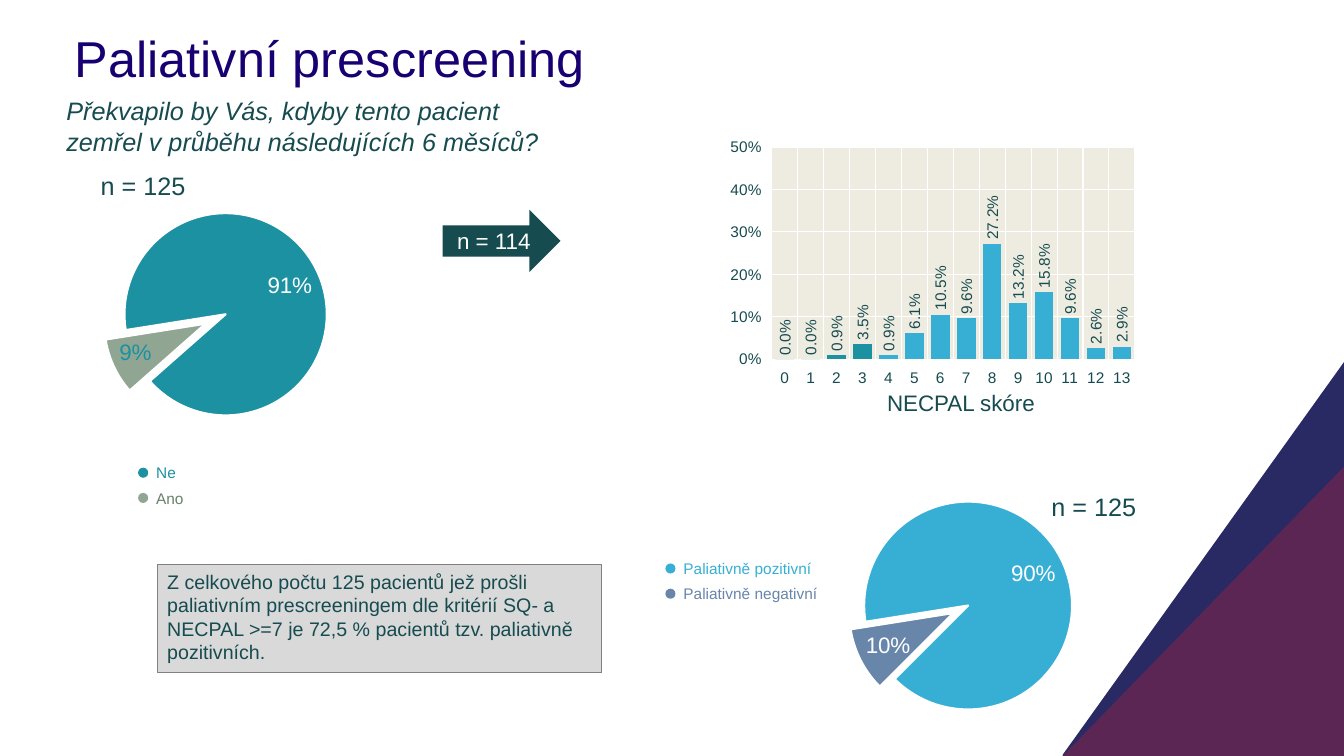
"""Builds the palliative prescreening slide with its charts and notes."""
from dataclasses import dataclass

from lxml import etree
from pptx import Presentation
from pptx.chart.data import CategoryChartData
from pptx.dml.color import RGBColor
from pptx.enum.chart import XL_CHART_TYPE, XL_LABEL_POSITION, XL_TICK_MARK
from pptx.enum.shapes import MSO_SHAPE
from pptx.enum.text import MSO_ANCHOR, PP_ALIGN
from pptx.oxml.ns import qn
from pptx.util import Inches, Pt

COLUMN, PIE = XL_CHART_TYPE.COLUMN_CLUSTERED, XL_CHART_TYPE.PIE
OUTSIDE, INSIDE = XL_LABEL_POSITION.OUTSIDE_END, XL_LABEL_POSITION.INSIDE_END
TICK_OUT = XL_TICK_MARK.OUTSIDE
TRIANGLE, OVAL = MSO_SHAPE.RIGHT_TRIANGLE, MSO_SHAPE.OVAL
RECTANGLE, ARROW = MSO_SHAPE.RECTANGLE, MSO_SHAPE.RIGHT_ARROW
TOP, MIDDLE = MSO_ANCHOR.TOP, MSO_ANCHOR.MIDDLE
LEFT, CENTER = PP_ALIGN.LEFT, PP_ALIGN.CENTER


@dataclass(frozen=True)
class Theme:
    font: str = "Arial"
    title: str = "180072"
    ink: str = "164B4F"
    white: str = "FFFFFF"
    navy: str = "292A64"
    plum: str = "5B2654"
    teal: str = "1B91A1"
    sage: str = "90A693"
    moss: str = "67816B"
    sky: str = "37AFD5"
    slate: str = "6786A9"
    plot: str = "EEECE1"
    note: str = "D9D9D9"
    note_line: str = "808080"
    title_size: int = 36
    lead_size: int = 18
    label_size: int = 16
    note_size: int = 14
    small_size: int = 11


def add_element(parent, tag, **attributes):
    return etree.SubElement(parent, qn(tag), attributes)


class PrescreeningPage:
    def __init__(self, deck, theme):
        self.theme = theme
        self.page = deck.slides.add_slide(deck.slide_layouts[5])

    def style(self, font, size, color, italic=None):
        font.name, font.size, font.italic = self.theme.font, Pt(size), italic
        font.color.rgb = RGBColor.from_string(color)

    def paint(self, fill, color):
        fill.solid()
        fill.fore_color.rgb = RGBColor.from_string(color)

    def set_text(self, box, text, size, color, anchor=TOP, align=LEFT, italic=None):
        frame = box.text_frame
        frame.word_wrap, frame.vertical_anchor = True, anchor
        para = frame.paragraphs[0]
        para.text, para.alignment = text, align
        self.style(para.font, size, color, italic)
        return para

    def title(self, text, area):
        box = self.page.shapes.title
        box.left, box.top, box.width, box.height = map(Inches, area)
        theme = self.theme
        para = self.set_text(box, text, theme.title_size, theme.title, MIDDLE)
        para.line_spacing = 0.9

    def text(self, text, area, size, color, italic=None):
        box = self.page.shapes.add_textbox(*map(Inches, area))
        self.set_text(box, text, size, color, italic=italic)

    def shape(self, kind, area, color, line=None, rotation=0):
        shape = self.page.shapes.add_shape(kind, *map(Inches, area))
        shape.shadow.inherit = False
        shape.rotation = rotation
        self.paint(shape.fill, color)
        if line:
            self.paint(shape.line.fill, line)
            shape.line.width = Pt(0.75)
        else:
            shape.line.fill.background()
        return shape

    def legend(self, left, top, entries):
        for row, (text, dot, color) in enumerate(entries):
            y = top + 0.25 * row
            self.shape(OVAL, (left, y + 0.09, 0.1, 0.1), dot)
            self.text(text, (left + 0.08, y, 3.09, 0.29), self.theme.small_size, color)

    def chart(self, kind, area, categories, values, number_format):
        data = CategoryChartData(number_format=number_format)
        data.categories = categories
        data.add_series("Series 1", values)
        chart = self.page.shapes.add_chart(kind, *map(Inches, area), data).chart
        chart.has_legend = chart.has_title = False
        self.style(chart.font, self.theme.lead_size, self.theme.ink)
        return chart

    def labels(self, series, size, color, number_format, position):
        labels = series.data_labels
        labels.number_format, labels.number_format_is_linked = number_format, False
        labels.position = position
        self.style(labels.font, size, color)
        return labels

    def pie(self, area, values, colors, explosion, label_colors):
        theme = self.theme
        chart = self.chart(PIE, area, ["1", "2"], values, "0")
        plot = chart.plots[0]
        plot.vary_by_categories = False
        series = plot.series[0]
        self.paint(series.format.fill, colors[0])
        labels = self.labels(series, theme.label_size, theme.white, "0%", INSIDE)
        labels.show_percentage, labels.show_value = True, False
        for index, color in enumerate(colors):
            point = series.points[index]
            self.paint(point.format.fill, color)
            self.paint(point.format.line.fill, theme.white)
            point.format.line.width = Pt(1.5)
            self.style(point.data_label.font, theme.label_size, label_colors[index])
            point.data_label.position = INSIDE
        pie = chart.element.find(".//" + qn("c:pieChart"))
        for label in pie.iter(qn("c:dLbl")):
            label.find(qn("c:showVal")).set("val", "0")
            label.find(qn("c:showPercent")).set("val", "1")
        explode = etree.Element(qn("c:explosion"), val=str(explosion))
        pie.find(qn("c:ser")).find(qn("c:spPr")).addnext(explode)
        for old in pie.findall(qn("c:firstSliceAng")):
            pie.remove(old)
        add_element(pie, "c:firstSliceAng", val="261")
        area_node = chart.element.find(".//" + qn("c:plotArea"))
        for old in area_node.findall(qn("c:layout")):
            area_node.remove(old)
        layout = etree.Element(qn("c:layout"))
        area_node.insert(0, layout)
        manual = add_element(layout, "c:manualLayout")
        add_element(manual, "c:layoutTarget", val="inner")
        for side in "xy":
            add_element(manual, f"c:{side}Mode", val="edge")
        for side, share in zip("xywh", (0.06, 0.07, 0.81, 0.93)):
            add_element(manual, f"c:{side}", val=str(share))

    def columns(self, area, values, color, low_color, low_count):
        theme = self.theme
        names = [str(score) for score in range(len(values))]
        chart = self.chart(COLUMN, area, names, values, "0.0%")
        plot = chart.plots[0]
        plot.gap_width, plot.vary_by_categories = 40, False
        series = plot.series[0]
        self.paint(series.format.fill, color)
        for index in range(low_count):
            self.paint(series.points[index].format.fill, low_color)
        labels = self.labels(series, theme.small_size, theme.ink, "0.0%", OUTSIDE)
        labels.show_value = True
        label_node = chart.element.find(".//" + qn("c:dLbls"))
        body = label_node.find(qn("c:txPr")).find(qn("a:bodyPr"))
        body.set("rot", "-5400000")
        body.set("vert", "horz")
        for axis in (chart.category_axis, chart.value_axis):
            axis.major_tick_mark = TICK_OUT
            axis.format.line.fill.background()
            axis.has_major_gridlines = True
            grid = axis.major_gridlines.format.line
            self.paint(grid.fill, theme.white)
            grid.width = Pt(0.75)
            self.style(axis.tick_labels.font, theme.small_size, theme.ink)
        scale = chart.value_axis
        scale.minimum_scale, scale.maximum_scale, scale.major_unit = 0, 0.5, 0.1
        scale.tick_labels.number_format = "0%"
        scale.tick_labels.number_format_is_linked = False
        backdrop = add_element(chart.element.find(".//" + qn("c:plotArea")), "c:spPr")
        fill = add_element(backdrop, "a:solidFill")
        add_element(fill, "a:srgbClr", val=theme.plot)


def main():
    deck = Presentation()
    deck.slide_width, deck.slide_height = Inches(13.33), Inches(7.5)
    theme = Theme()
    page = PrescreeningPage(deck, theme)
    page.shape(TRIANGLE, (9.98, 4.14, 3.91, 2.8), theme.navy, rotation=270)
    page.shape(TRIANGLE, (10.5, 4.66, 2.88, 2.8), theme.plum, rotation=270)
    page.title("Paliativní prescreening", (0.64, 0.21, 10.22, 0.8))
    page.legend(1.37, 4.55, [("Ne", theme.teal, theme.teal), ("Ano", theme.sage, theme.moss)])
    note = page.shape(RECTANGLE, (1.56, 5.6, 4.41, 1.07), theme.note, theme.note_line)
    page.set_text(note, "Z celkového počtu 125 pacientů jež prošli paliativním prescreeningem "
                  "dle kritérií SQ- a NECPAL >=7 je 72,5 % pacientů tzv. paliativně pozitivních.",
                  theme.note_size, theme.ink)
    page.text("Překvapilo by Vás, kdyby tento pacient zemřel v průběhu následujících 6 měsíců?",
              (0.56, 0.9, 5, 0.71), theme.lead_size, theme.ink, italic=True)
    scores = (0, 0, 0.009, 0.035, 0.009, 0.061, 0.105,
              0.096, 0.272, 0.132, 0.158, 0.096, 0.026, 0.029)
    page.columns((7.16, 1.32, 4.18, 2.57), scores, theme.sky, theme.teal, 4)
    page.text("NECPAL skóre", (8.7, 3.81, 3.15, 0.37), theme.label_size, theme.ink)
    page.pie((8.25, 4.73, 2.75, 2.46), (90, 10), (theme.sky, theme.slate), 8,
             (theme.white, theme.white))
    page.legend(6.6, 5.5, [("Paliativně pozitivní", theme.sky, theme.sky),
                           ("Paliativně negativní", theme.slate, theme.slate)])
    page.pie((0.86, 1.85, 2.75, 2.46), (91, 9), (theme.teal, theme.sage), 11,
             (theme.white, theme.teal))
    arrow = page.shape(ARROW, (4.39, 2.08, 1.17, 0.62), theme.ink)
    page.set_text(arrow, "n = 114", theme.label_size, theme.white, MIDDLE, CENTER)
    for left, top in ((10.33, 4.83), (0.9, 1.64)):
        page.text("n = 125", (left, top, 1.1, 0.4), theme.lead_size, theme.ink)
    deck.save("out.pptx")


if __name__ == "__main__":
    main()
